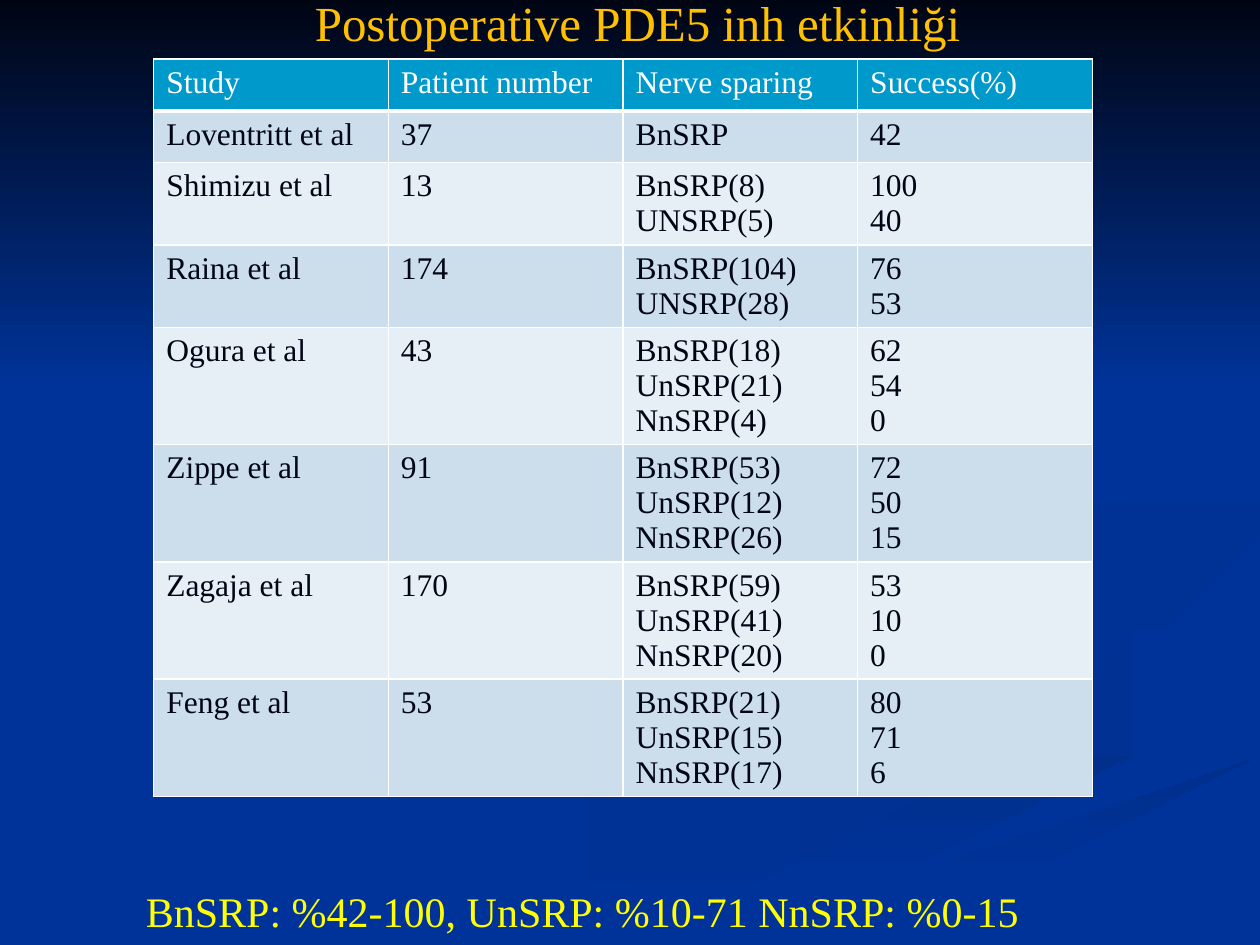
from lxml import etree
from pptx import Presentation
from pptx.dml.color import RGBColor
from pptx.enum import shapes, text
from pptx.oxml.ns import qn
from pptx.util import Inches, Pt

FONT = "Times New Roman"
BLUE, NIGHT, WHITE = "003399", "000514", "FFFFFF"
HEADER_FILL, BAND_FILLS = "0099CC", ("CCDEEC", "E7EFF6")

STUDIES = [
    ("Study", "Patient number", "Nerve sparing", "Success(%)"),
    ("Loventritt et al", "37", "BnSRP", "42"),
    ("Shimizu et al", "13", "BnSRP(8)\nUNSRP(5)", "100\n40"),
    ("Raina et al", "174", "BnSRP(104)\nUNSRP(28)", "76\n53"),
    ("Ogura et al", "43", "BnSRP(18)\nUnSRP(21)\nNnSRP(4)", "62\n54\n0"),
    ("Zippe et al", "91", "BnSRP(53)\nUnSRP(12)\nNnSRP(26)", "72\n50\n15"),
    ("Zagaja et al", "170", "BnSRP(59)\nUnSRP(41)\nNnSRP(20)", "53\n10\n0"),
    ("Feng et al", "53", "BnSRP(21)\nUnSRP(15)\nNnSRP(17)", "80\n71\n6"),
]

# Background ribbons: outline in inches, first colour, last colour, clockwise angle
RIBBONS = [
    ([(7.81, 5.53), (6.42, 5.07), (5.75, 4.59), (6.02, 4.95), (7.81, 5.56),
      (7.74, 5.83), (5.39, 6.49), (3, 7.49), (3.61, 7.49), (5.64, 6.65),
      (7.8, 6.05), (8, 5.81)], BLUE, "003193", 0),
    ([(9.43, 5.7), (9.05, 5.4), (7.58, 4.98), (7.24, 4.64), (7.46, 5),
      (8.68, 5.44), (9.07, 5.62), (9.18, 5.81), (8.94, 6.05), (9.32, 5.89)],
     BLUE, "003193", 45),
    ([(5.03, 7.49), (5.71, 7.49), (6.95, 6.92), (8.21, 6.51), (9.98, 6.09),
      (9.98, 5.81), (9.36, 6.02), (7.64, 6.47), (6.3, 6.93)],
     "002F8C", BLUE, 90),
    ([(7.25, 4.64), (7.59, 4.98), (9.05, 5.4), (9.43, 5.7), (8.92, 6.05),
      (6.63, 6.68), (4.77, 7.49), (5.03, 7.49), (6.96, 6.69), (9.99, 5.81),
      (9.99, 5.38), (8.32, 4.98), (7.81, 4.63), (8.22, 4.34), (9.99, 4.02),
      (9.99, 3.87), (7.7, 4.27)], BLUE, BLUE, 0),
    ([(7.81, 4.6), (7.91, 4.78), (8.26, 4.96), (8.05, 4.72), (8.43, 4.48),
      (9.98, 4.2), (9.98, 4.02), (8.35, 4.3)], "003091", BLUE, 45),
    ([(6.83, 4.3), (8.25, 4.02), (8.76, 3.78), (8.94, 3.44), (8.8, 3.07),
      (8.43, 2.75), (7.62, 2.33), (8.62, 2.92), (8.89, 3.35), (8.76, 3.6),
      (8.18, 3.86), (6.25, 4.26), (5.77, 4.62), (6.22, 5), (5.96, 4.61)],
     "002F8E", BLUE, 45),
]


def color(value):
    return RGBColor.from_string(value)


def write(frame, content, size=18, ink=NIGHT):
    frame.text = content
    for paragraph in frame.paragraphs:
        paragraph.alignment = text.PP_ALIGN.LEFT
        font = paragraph.runs[0].font
        font.name, font.size, font.color.rgb = FONT, Pt(size), color(ink)


def add_label(slide, box, content, wrap=True, **style):
    frame = slide.shapes.add_textbox(*map(Inches, box)).text_frame
    frame.word_wrap = wrap
    write(frame, content, **style)


def paint(shape, first, last, angle):
    """Fill without outline: one colour, or a gradient between two."""
    shape.shadow.inherit = False
    shape.line.fill.background()
    if first == last:
        shape.fill.solid()
        shape.fill.fore_color.rgb = color(first)
        return
    shape.fill.gradient()
    shape.fill.gradient_angle = (360 - angle) % 360
    for stop, shade in zip(shape.fill.gradient_stops, (first, last)):
        stop.color.rgb = color(shade)


def add_ribbon(slide, outline, *shades):
    start, *rest = outline
    builder = slide.shapes.build_freeform(*start, scale=Inches(1))
    builder.add_line_segments(rest, close=True)
    paint(builder.convert_to_shape(), *shades)


def add_night_sky(slide):
    sky = slide.shapes.add_shape(
        shapes.MSO_SHAPE.RECTANGLE, 0, 0, Inches(10), Inches(3.08))
    paint(sky, NIGHT, BLUE, 90)


def set_borders(cell, bottom=1):
    """Draw white cell edges; edges must precede the fill in the XML."""
    properties = cell._tc.get_or_add_tcPr()
    for edge, width in (("lnL", 1), ("lnR", 1), ("lnT", 1), ("lnB", bottom)):
        line = etree.SubElement(properties, qn(f"a:{edge}"), w=str(Pt(width)))
        fill = etree.SubElement(line, qn("a:solidFill"))
        etree.SubElement(fill, qn("a:srgbClr"), val=WHITE)


def add_study_table(slide):
    box = map(Inches, (1.22, 0.47, 7.45, 6.51))
    frame = slide.shapes.add_table(len(STUDIES), len(STUDIES[0]), *box)
    for r, study in enumerate(STUDIES):
        header = r == 0
        frame.table.rows[r].height = Inches(0.41)  # rows grow with their text
        for c, content in enumerate(study):
            cell = frame.table.cell(r, c)
            set_borders(cell, bottom=3 if header else 1)
            cell.fill.solid()
            cell.fill.fore_color.rgb = color(
                HEADER_FILL if header else BAND_FILLS[(r - 1) % 2])
            write(cell.text_frame, content, ink=WHITE if header else NIGHT)
    frame.height = Inches(6.51)


def main():
    deck = Presentation()
    deck.slide_width, deck.slide_height = Inches(10), Inches(7.5)
    slide = deck.slides.add_slide(deck.slide_layouts[6])
    slide.background.fill.solid()
    slide.background.fill.fore_color.rgb = color(BLUE)
    for ribbon in RIBBONS:
        add_ribbon(slide, *ribbon)
    add_night_sky(slide)
    add_study_table(slide)
    add_label(slide, (1.06, 6.98, 7.64, 0.5),
              "BnSRP: %42-100, UnSRP: %10-71 NnSRP: %0-15", size=24, ink="FFFF00")
    add_label(slide, (2.4, -0.11, 5.38, 0.57),
              "Postoperative PDE5 inh etkinliği", wrap=False, size=28, ink="FFC000")
    deck.save("out.pptx")


if __name__ == "__main__":
    main()
